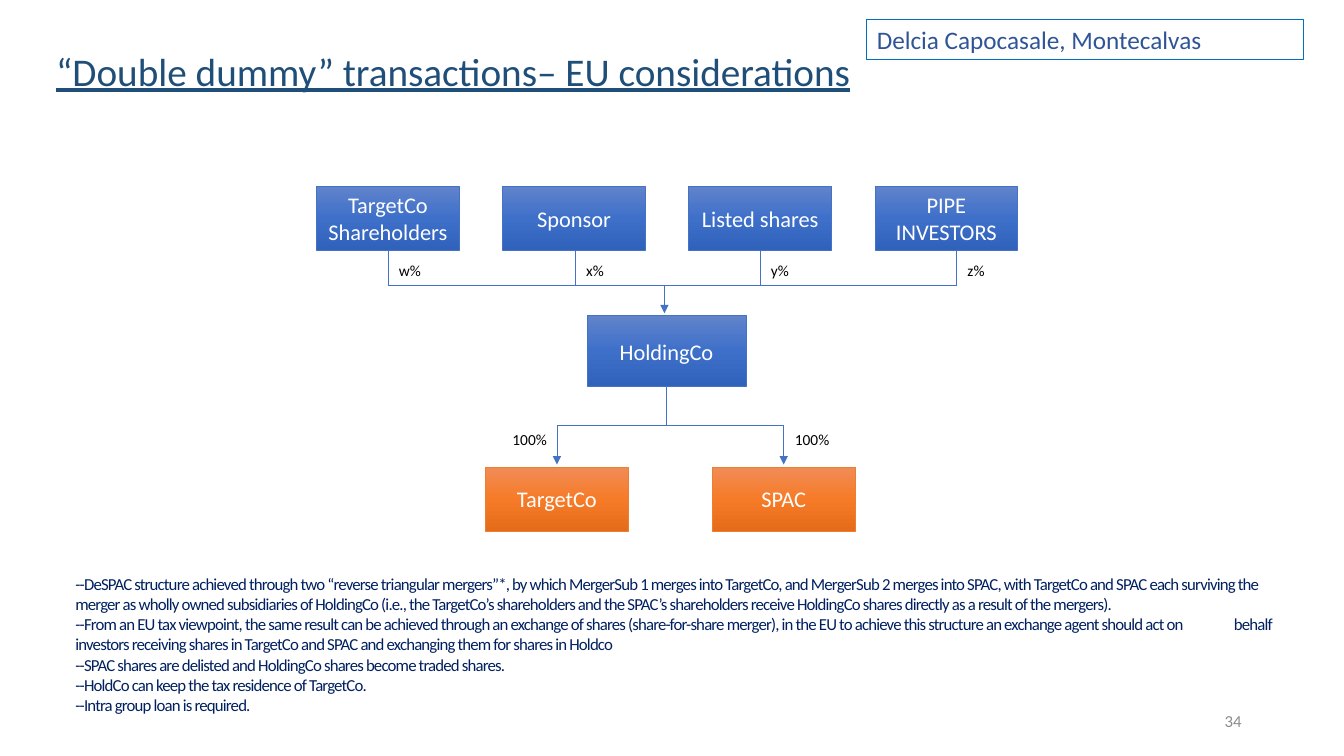
from copy import deepcopy

from lxml.etree import SubElement
from pptx import Presentation
from pptx.dml.color import RGBColor
from pptx.enum.shapes import MSO_CONNECTOR, MSO_SHAPE
from pptx.enum.text import MSO_ANCHOR, MSO_AUTO_SIZE, PP_ALIGN
from pptx.oxml.ns import qn
from pptx.util import Inches, Pt

COLUMNS, ROWS = 160, 90
SLIDE_WIDTH, SLIDE_HEIGHT = Inches(13.33), Inches(7.5)
FONT = "Calibri"

WHITE = RGBColor(0xFF, 0xFF, 0xFF)
BLACK = RGBColor(0x00, 0x00, 0x00)
GREY = RGBColor(0x8C, 0x8C, 0x8C)
TITLE_BLUE = RGBColor(0x1F, 0x4E, 0x79)
NOTE_BLUE = RGBColor(0x00, 0x20, 0x60)
AUTHOR_BLUE = RGBColor(0x2F, 0x55, 0x97)
AUTHOR_BORDER = RGBColor(0x00, 0x70, 0xC0)
BLUE = RGBColor(0x44, 0x72, 0xC4)
ORANGE = RGBColor(0xED, 0x7D, 0x31)
SHADES = {
    BLUE: [RGBColor(0x61, 0x83, 0xCB), RGBColor(0x3E, 0x70, 0xCA), RGBColor(0x30, 0x62, 0xBB)],
    ORANGE: [RGBColor(0xF1, 0x8C, 0x57), RGBColor(0xF6, 0x7B, 0x28), RGBColor(0xE5, 0x6C, 0x19)],
}

BOX_WIDTH, BOX_HEIGHT = 17, 7.6
HOLDER_LEFT, HOLDER_STEP, HOLDER_TOP = 37.68, 22.16, 22.2
HOLDERS = [  # name, stake, column of the line down
    ("TargetCo\nShareholders", "w%", 46.2),
    ("Sponsor", "x%", 68.5),
    ("Listed shares", "y%", 90.5),
    ("PIPE INVESTORS", "z%", 113.9),
]
UPPER_BUS, LOWER_BUS = 34, 50.6
HOLDING_TOP, HOLDING_HEIGHT = 37.6, 8.4
SUBSIDIARY_TOP = 55.6
LABEL_WIDTH, LABEL_HEIGHT = 8.3, 3.5
NOTES = [
    "--DeSPAC structure achieved through two “reverse triangular mergers”*, by which MergerSub 1 "
    "merges into TargetCo, and MergerSub 2 merges into SPAC, with TargetCo and SPAC each surviving "
    "the merger as wholly owned subsidiaries of HoldingCo (i.e., the TargetCo’s shareholders and "
    "the SPAC’s shareholders receive HoldingCo shares directly as a result of the mergers).",
    "--From an EU tax viewpoint, the same result can be achieved through an exchange of shares "
    "(share-for-share merger), in the EU to achieve this structure an exchange agent should act "
    "on\tbehalf investors receiving shares in TargetCo and SPAC and exchanging them for shares "
    "in Holdco",
    "--SPAC shares are delisted and HoldingCo shares become traded shares.",
    "--HoldCo can keep the tax residence of TargetCo.",
    "--Intra group loan is required.",
]


def across(columns):
    return round(SLIDE_WIDTH * columns / COLUMNS)


def down(rows):
    return round(SLIDE_HEIGHT * rows / ROWS)


def place(left, top, width, height):
    return across(left), down(top), across(width), down(height)


def write(shape, lines, size, color, align=PP_ALIGN.LEFT, anchor=MSO_ANCHOR.TOP):
    frame = shape.text_frame
    frame.word_wrap = True
    frame.vertical_anchor = anchor
    for index, line in enumerate(lines):
        para = frame.add_paragraph() if index else frame.paragraphs[0]
        para.alignment = align
        span = para.add_run()
        span.text = line
        span.font.name = FONT
        span.font.size = Pt(size)
        span.font.color.rgb = color
    return frame


def add_text(page, spot, lines, size, color, **layout):
    box = page.shapes.add_textbox(*place(*spot))
    return write(box, lines, size, color, **layout)


def add_rectangle(page, spot, border, weight):
    box = page.shapes.add_shape(MSO_SHAPE.RECTANGLE, *place(*spot))
    box.shadow.inherit = False
    box.line.color.rgb = border
    box.line.width = Pt(weight)
    return box


def add_company(page, name, spot, color):
    box = add_rectangle(page, spot, color, 0.5)
    box.fill.gradient()
    box.fill.gradient_angle = 270
    stop_list = box._element.spPr.find(qn("a:gradFill")).find(qn("a:gsLst"))
    stop_list.append(deepcopy(stop_list[-1]))
    for index, (stop, shade) in enumerate(zip(box.fill.gradient_stops, SHADES[color])):
        stop.position = index / 2
        stop.color.rgb = shade
    write(box, name.split("\n"), 16, WHITE, PP_ALIGN.CENTER, MSO_ANCHOR.MIDDLE)


def add_link(page, start, end, arrow=False):
    """Draw a line between two (column, row) points."""
    link = page.shapes.add_connector(
        MSO_CONNECTOR.STRAIGHT, across(start[0]), down(start[1]), across(end[0]), down(end[1]))
    link.line.color.rgb = BLUE
    link.line.width = Pt(0.5)
    properties = link._element.spPr
    if arrow:
        SubElement(properties.find(qn("a:ln")), qn("a:tailEnd"), type="triangle")
    SubElement(properties, qn("a:effectLst"))


def add_stake(page, stake, left, top, align=PP_ALIGN.LEFT):
    add_text(page, (left, top, LABEL_WIDTH, LABEL_HEIGHT), [stake], 11, BLACK, align=align)


def add_holders(page):
    for index, (name, stake, column) in enumerate(HOLDERS):
        left = HOLDER_LEFT + index * HOLDER_STEP
        add_company(page, name, (left, HOLDER_TOP, BOX_WIDTH, BOX_HEIGHT), BLUE)
        add_link(page, (column, HOLDER_TOP + BOX_HEIGHT), (column, UPPER_BUS))
        add_stake(page, stake, column + 0.1, 30.5)
    add_link(page, (HOLDERS[0][2], UPPER_BUS), (HOLDERS[-1][2], UPPER_BUS))


def add_holding(page):
    add_link(page, (79.1, UPPER_BUS), (79.1, HOLDING_TOP - 0.3), arrow=True)
    add_company(page, "HoldingCo", (69.9, HOLDING_TOP, 18.9, HOLDING_HEIGHT), BLUE)
    add_link(page, (79.35, HOLDING_TOP + HOLDING_HEIGHT), (79.35, LOWER_BUS))


def add_subsidiaries(page):
    middles = []
    for name, left in (("TargetCo", 57.8), ("SPAC", 84.8)):
        middle = left + BOX_WIDTH / 2
        middles.append(middle)
        add_company(page, name, (left, SUBSIDIARY_TOP, BOX_WIDTH, BOX_HEIGHT), ORANGE)
        add_link(page, (middle, LOWER_BUS), (middle, SUBSIDIARY_TOP - 0.3), arrow=True)
    add_link(page, (middles[0], LOWER_BUS), (middles[1], LOWER_BUS))
    add_stake(page, "100%", middles[0] - LABEL_WIDTH, LOWER_BUS, PP_ALIGN.RIGHT)
    add_stake(page, "100%", middles[1] + 0.15, LOWER_BUS)


def add_notes_text(page):
    frame = add_text(page, (7.8, 67.7, 145.2, 18.1), NOTES, 12, NOTE_BLUE)
    for para in frame.paragraphs:
        para.runs[0].font._element.set("spc", "-60")
    tabs = SubElement(frame.paragraphs[1]._p.get_or_add_pPr(), qn("a:tabLst"))
    SubElement(tabs, qn("a:tab"), pos=str(across(137.9)), algn="l")


def add_author(page):
    box = add_rectangle(page, (103.2, 2.3, 52, 4.8), AUTHOR_BORDER, 0.75)
    box.fill.background()
    write(box, ["Delcia Capocasale, Montecalvas"], 18, AUTHOR_BLUE)


def main():
    deck = Presentation()
    deck.slide_width, deck.slide_height = SLIDE_WIDTH, SLIDE_HEIGHT
    page = deck.slides.add_slide(deck.slide_layouts[6])
    title = add_text(page, (5.5, 5, 149.6, 6.8),
                     ["“Double dummy” transactions– EU considerations"], 28, TITLE_BLUE)
    title.auto_size = MSO_AUTO_SIZE.SHAPE_TO_FIT_TEXT
    title.paragraphs[0].runs[0].font.underline = True
    add_holders(page)
    add_holding(page)
    add_subsidiaries(page)
    add_notes_text(page)
    add_author(page)
    add_text(page, (113, 83.4, 36, 4.8), ["34"], 12, GREY,
             align=PP_ALIGN.RIGHT, anchor=MSO_ANCHOR.MIDDLE)
    deck.save("out.pptx")


if __name__ == "__main__":
    main()
